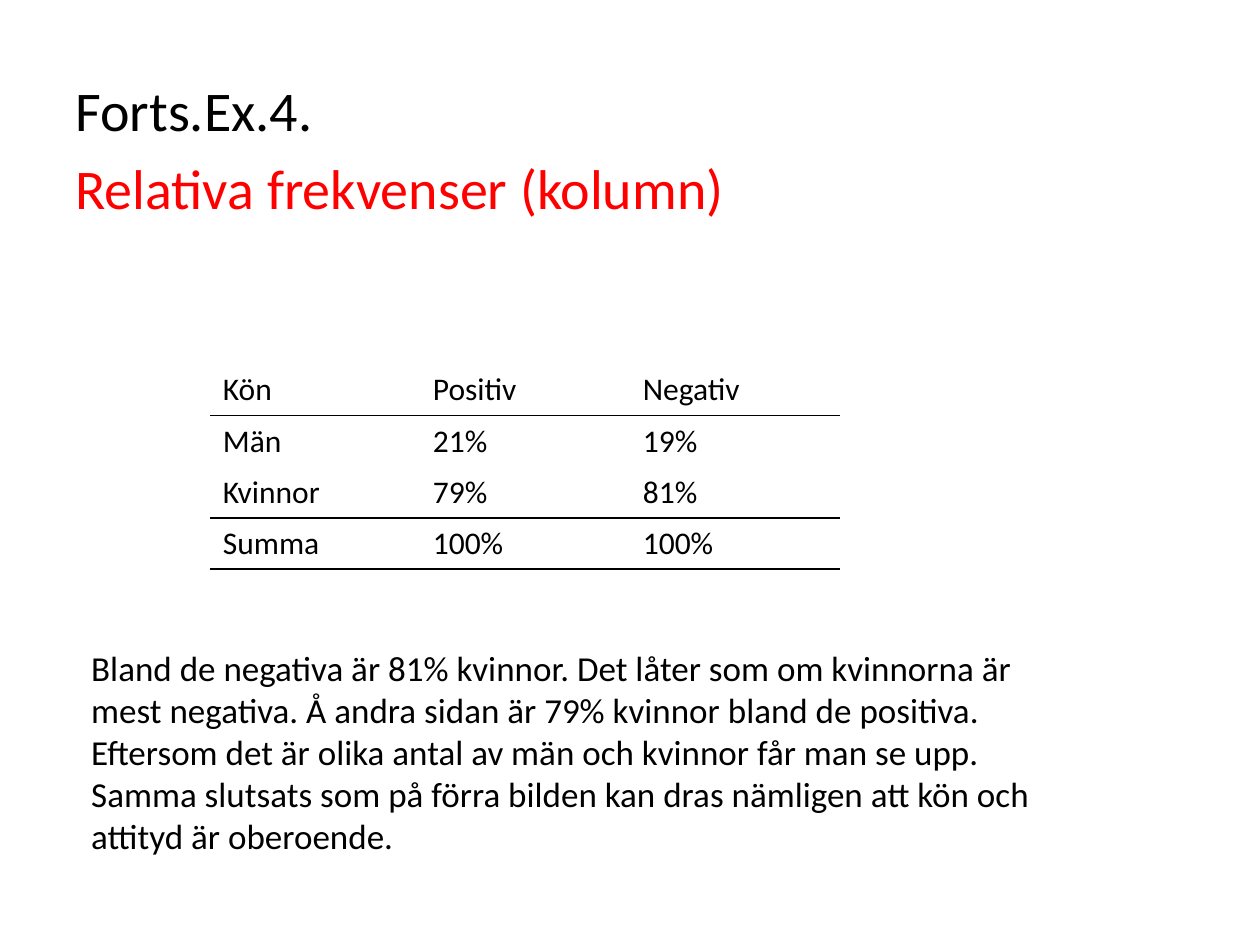
"""Build a slide with relative column frequencies and a conclusion."""
from lxml import etree
from pptx import Presentation
from pptx.dml.color import RGBColor
from pptx.enum import text as t
from pptx.oxml import ns
from pptx.util import Cm, Pt

FONT = "Calibri"
BLACK, RED = "000000", "FF0000"
ROWS = [
    ("Kön", "Positiv", "Negativ"),
    ("Män", "21%", "19%"),
    ("Kvinnor", "79%", "81%"),
    ("Summa", "100%", "100%"),
]
RULES_BELOW = {0, 2, 3}
CONCLUSION = (
    "Bland de negativa är 81% kvinnor. Det låter som om kvinnorna är mest negativa. "
    "Å andra sidan är 79% kvinnor bland de positiva. Eftersom det är olika antal av "
    "män och kvinnor får man se upp. Samma slutsats som på förra bilden kan dras "
    "nämligen att kön och attityd är oberoende."
)


def rgb(color):
    return RGBColor.from_string(color)


def add_run(p, content, size, color=BLACK):
    r = p.add_run()
    r.text = content
    r.font.name = FONT
    r.font.size = Pt(size)
    r.font.bold = False
    r.font.color.rgb = rgb(color)


def add_text(s, left, top, width, height, lines, size, before=0, indent=0):
    sp = s.shapes.add_textbox(Cm(left), Cm(top), Cm(width), Cm(height))
    tf = sp.text_frame
    tf.word_wrap = True
    for i, (content, color) in enumerate(lines):
        p = tf.add_paragraph() if i else tf.paragraphs[0]
        p.space_before = Pt(before)
        if indent:
            pPr = p._p.get_or_add_pPr()
            pPr.set("marL", str(Cm(indent)))
            pPr.set("indent", str(-Cm(indent)))
        add_run(p, content, size, color)
    return tf


def set_borders(cell, ruled_sides):
    tcPr = cell._tc.get_or_add_tcPr()
    for i, side in enumerate("LRTB"):
        ln = etree.Element(ns.qn(f"a:ln{side}"), w=str(Pt(1)))
        if side in ruled_sides:
            fill = etree.SubElement(ln, ns.qn("a:solidFill"))
            etree.SubElement(fill, ns.qn("a:srgbClr"), val=BLACK)
        else:
            etree.SubElement(ln, ns.qn("a:noFill"))
        tcPr.insert(i, ln)


def add_frequency_table(s, left, top, width, height):
    shape = s.shapes.add_table(len(ROWS), len(ROWS[0]), Cm(left), Cm(top),
                               Cm(width), Cm(height))
    table = shape.table
    table.first_row = table.horz_banding = False
    for i, row in enumerate(ROWS):
        sides = ("T" if i - 1 in RULES_BELOW else "") + ("B" if i in RULES_BELOW else "")
        for j, content in enumerate(row):
            cell = table.cell(i, j)
            cell.fill.background()
            set_borders(cell, sides)
            add_run(cell.text_frame.paragraphs[0], content, 18)


def main():
    prs = Presentation()
    prs.slide_width, prs.slide_height = Cm(25.4), Cm(19.05)
    s = prs.slides.add_slide(prs.slide_layouts[6])
    add_frequency_table(s, 4.24, 7.35, 12.7, 4.12)
    add_text(s, 1.27, 1.4, 22.86, 3.58,
             [("Forts.Ex.4.", BLACK), ("Relativa frekvenser (kolumn)", RED)],
             32, before=6, indent=0.95)
    tf = add_text(s, 1.59, 12.9, 20.5, 4.52, [(CONCLUSION, BLACK)], 20)
    tf.auto_size = t.MSO_AUTO_SIZE.SHAPE_TO_FIT_TEXT
    prs.save("out.pptx")


if __name__ == "__main__":
    main()
